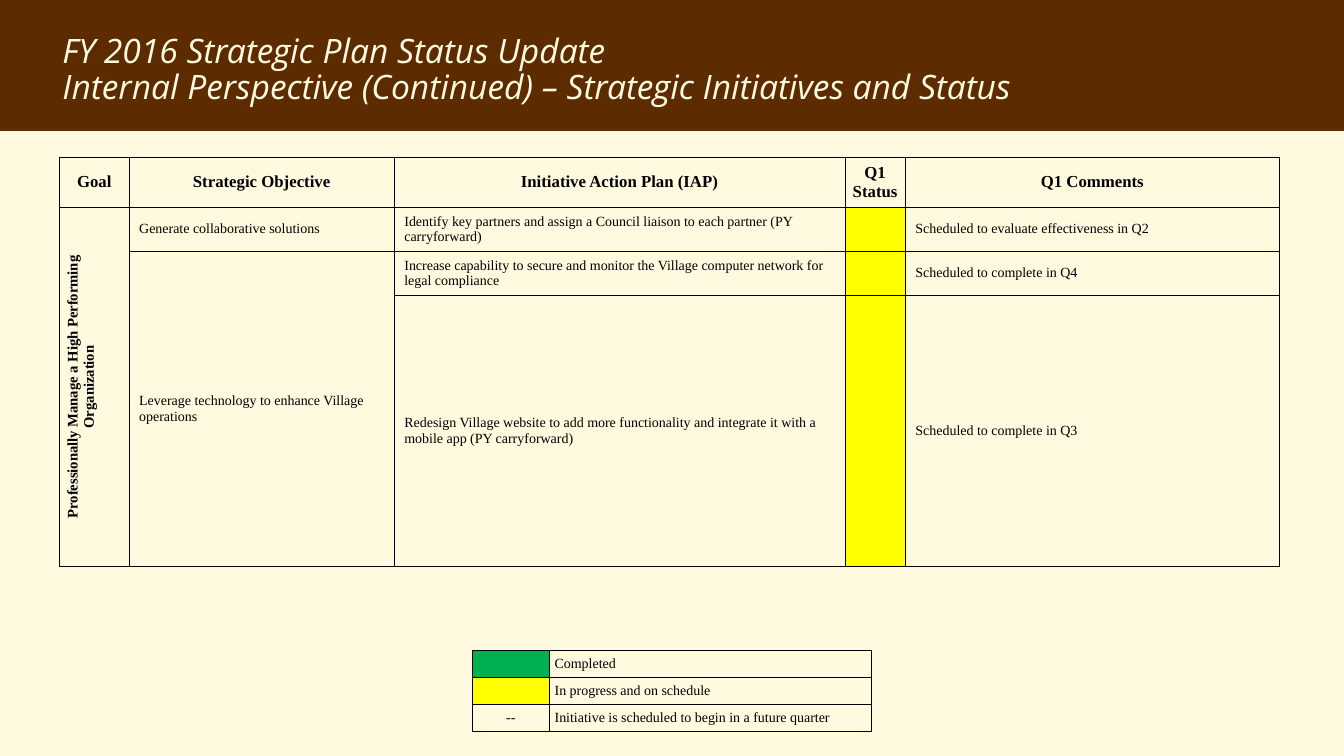
from lxml.etree import SubElement
from pptx import Presentation
from pptx.dml.color import RGBColor
from pptx.enum.shapes import MSO_SHAPE
from pptx.enum.text import MSO_ANCHOR, MSO_AUTO_SIZE, PP_ALIGN
from pptx.oxml.ns import qn
from pptx.util import Inches, Pt

CREAM, BROWN, BLACK = "FFF9DF", "5D2B00", "000000"
YELLOW, GREEN = "FFFF00", "00B050"


def rgb(value):
    return RGBColor.from_string(value)


def set_attrs(target, values):
    for name, value in values.items():
        setattr(target, name, value)


class SlideBuilder:
    """Places elements on a grid of 100 columns by 100 rows."""

    title_font = dict(name="Open Sans", size=Pt(24), italic=True, bold=False)
    header = dict(name="Times New Roman", size=Pt(12), bold=True)
    goal = dict(header, size=Pt(10.5))
    body = dict(header, size=Pt(10), bold=False)
    tight = dict.fromkeys(
        ("margin_left", "margin_right", "margin_top", "margin_bottom"), Inches(0.05))

    def __init__(self, prs):
        self.col, self.row = prs.slide_width / 100, prs.slide_height / 100
        self.slide = prs.slides.add_slide(prs.slide_layouts[5])
        self.slide.background.fill.solid()
        self.slide.background.fill.fore_color.rgb = rgb(CREAM)

    def box(self, left, top, width, height):
        return (round(left * self.col), round(top * self.row),
                round(width * self.col), round(height * self.row))

    def band(self, height, color):
        """Draw a full-width band behind everything else."""
        sp = self.slide.shapes.add_shape(MSO_SHAPE.RECTANGLE, *self.box(0, 0, 100, height))
        sp.shadow.inherit = False
        sp.fill.solid()
        sp.fill.fore_color.rgb = rgb(color)
        sp.line.fill.background()
        self.slide.shapes._spTree.insert(2, sp._element)

    def title(self, lines, *at):
        sp = self.slide.shapes.title
        set_attrs(sp, dict(zip(("left", "top", "width", "height"), self.box(*at))))
        tf = sp.text_frame
        tf.text = "\n".join(lines)
        set_attrs(tf, dict(word_wrap=True, auto_size=MSO_AUTO_SIZE.NONE,
                           vertical_anchor=MSO_ANCHOR.MIDDLE))
        for p in tf.paragraphs:
            set_attrs(p, dict(alignment=PP_ALIGN.LEFT, line_spacing=0.88))
            for r in p.runs:
                set_attrs(r.font, self.title_font)
                r.font.color.rgb = rgb(CREAM)

    def table(self, left, top, cols, rows):
        shape = self.slide.shapes.add_table(
            len(rows), len(cols), *self.box(left, top, sum(cols), sum(rows)))
        table = shape.table
        set_attrs(table, dict(first_row=False, horz_banding=False))
        for column, width in zip(table.columns, cols):
            column.width = round(width * self.col)
        for row, height in zip(table.rows, rows):
            row.height = round(height * self.row)
        for cell in table.iter_cells():
            self.borders(cell)
            cell.fill.background()
        return table

    def borders(self, cell):
        tc_pr = cell._tc.get_or_add_tcPr()
        for side in ("lnL", "lnR", "lnT", "lnB"):
            ln = SubElement(tc_pr, qn(f"a:{side}"), w=str(Pt(0.5)))
            SubElement(SubElement(ln, qn("a:solidFill")), qn("a:srgbClr"), val=BLACK)

    def cell_text(self, cell, text, font, center=False, margins=None):
        cell.vertical_anchor = MSO_ANCHOR.MIDDLE
        set_attrs(cell, margins or {})
        p = cell.text_frame.paragraphs[0]
        p.alignment = PP_ALIGN.CENTER if center else PP_ALIGN.LEFT
        r = p.add_run()
        r.text = text
        set_attrs(r.font, font)
        r.font.color.rgb = rgb(BLACK)

    def cell_fill(self, cell, color):
        cell.fill.solid()
        cell.fill.fore_color.rgb = rgb(color)
        p = cell.text_frame.paragraphs[0]
        SubElement(p._p, qn("a:endParaRPr"), sz="1000")


HEADERS = ["Goal", "Strategic Objective", "Initiative Action Plan (IAP)",
           "Q1 Status", "Q1 Comments"]
GOAL = "Professionally Manage a High Performing Organization"
INITIATIVES = [
    ("Generate collaborative solutions",
     "Identify key partners and assign a Council liaison to each partner (PY carryforward)",
     "Scheduled to evaluate effectiveness in Q2"),
    ("Leverage technology to enhance Village operations",
     "Increase capability to secure and monitor the Village computer network for legal compliance",
     "Scheduled to complete in Q4"),
    (None,
     "Redesign Village website to add more functionality and integrate it with a mobile app "
     "(PY carryforward)",
     "Scheduled to complete in Q3"),
]
LEGEND = [(GREEN, "Completed"), (YELLOW, "In progress and on schedule"),
          (None, "Initiative is scheduled to begin in a future quarter")]


def add_plan(b):
    plan = b.table(4.43, 20.8, [5.18, 19.73, 33.53, 4.5, 27.83], [6.61, 5.82, 5.82, 35.85])
    for c, text in enumerate(HEADERS):
        b.cell_text(plan.cell(0, c), text, b.header, center=True,
                    margins=b.tight if text == "Q1 Status" else None)
    goal = plan.cell(1, 0)
    goal.merge(plan.cell(3, 0))
    b.cell_text(goal, GOAL, b.goal, center=True)
    goal._tc.get_or_add_tcPr().set("vert", "vert270")
    plan.cell(2, 1).merge(plan.cell(3, 1))
    for i, (objective, action, comment) in enumerate(INITIATIVES, 1):
        for c, text in ((1, objective), (2, action), (4, comment)):
            if text:
                b.cell_text(plan.cell(i, c), text, b.body)
        b.cell_fill(plan.cell(i, 3), YELLOW)


def add_legend(b):
    legend = b.table(35.11, 86, [5.78, 23.93], [3.57] * len(LEGEND))
    for i, (color, meaning) in enumerate(LEGEND):
        if color:
            b.cell_fill(legend.cell(i, 0), color)
        else:
            b.cell_text(legend.cell(i, 0), "--", b.body, center=True, margins=b.tight)
        b.cell_text(legend.cell(i, 1), meaning, b.body, margins=b.tight)


def main():
    prs = Presentation()
    set_attrs(prs, dict(slide_width=Inches(13.33), slide_height=Inches(7.5)))
    b = SlideBuilder(prs)
    b.band(17.33, BROWN)
    b.title(["FY 2016 Strategic Plan Status Update",
             "Internal Perspective (Continued) – Strategic Initiatives and Status"],
            3.9, 3.33, 92.2, 12.13)
    add_plan(b)
    add_legend(b)
    prs.save("out.pptx")


if __name__ == "__main__":
    main()
